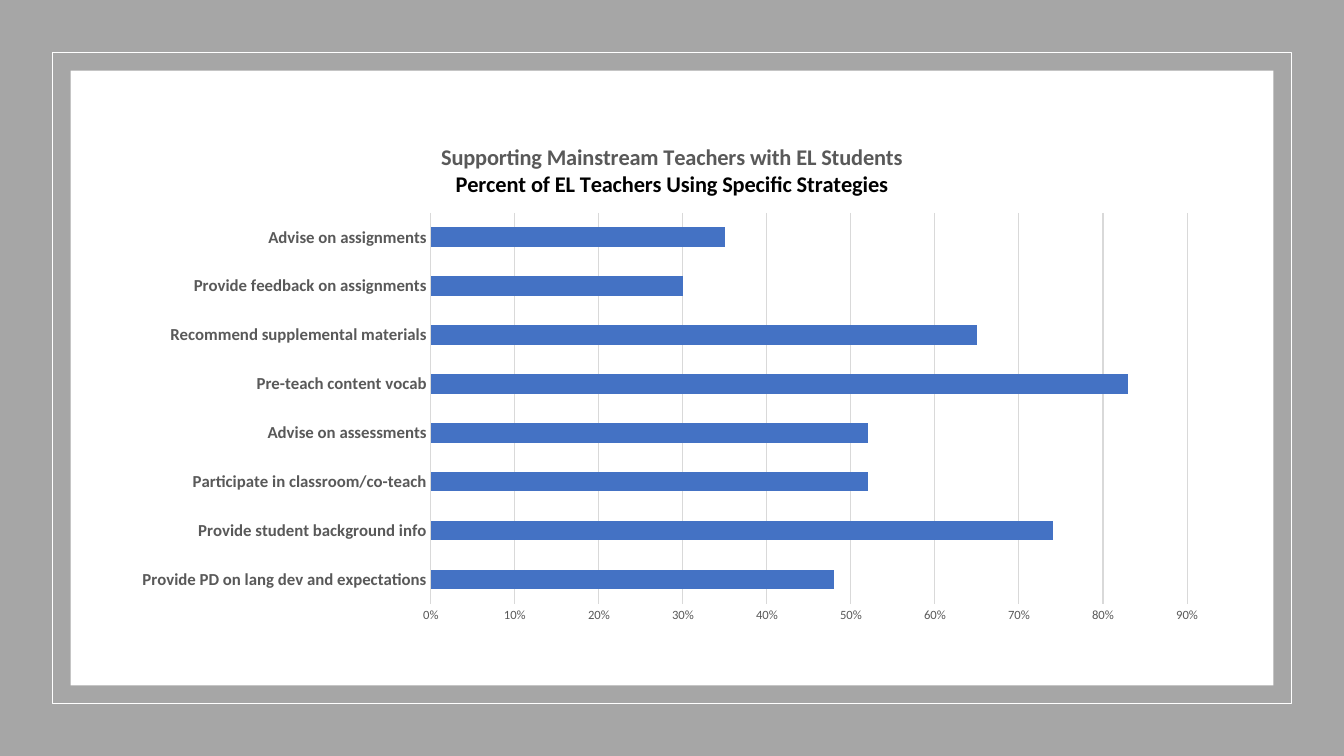
"""Builds a slide with a framed bar chart of strategies used by EL teachers."""
import pptx
import pptx.chart.data
import pptx.dml.color
import pptx.enum.chart
import pptx.enum.shapes
import pptx.oxml
import pptx.oxml.ns
import pptx.util

COLORS = {"backdrop": "A6A6A6", "white": "FFFFFF", "bar": "4472C4",
          "text": "595959", "black": "000000", "grid": "D9D9D9"}
WIDTH, HEIGHT = 13.33, 7.5
STRATEGIES = [
    ("Provide PD on lang dev and expectations", 0.48),
    ("Provide student background info", 0.74),
    ("Participate in classroom/co-teach", 0.52),
    ("Advise on assessments", 0.52),
    ("Pre-teach content vocab", 0.83),
    ("Recommend supplemental materials", 0.65),
    ("Provide feedback on assignments", 0.30),
    ("Advise on assignments", 0.35),
]
TITLE = [("Supporting Mainstream Teachers with EL Students", "text"),
         ("Percent of EL Teachers Using Specific Strategies", "black")]
PLOT_SHARES = {"x": 0.28, "y": 0.175, "w": 0.69, "h": 0.77}


def rgb(name):
    return pptx.dml.color.RGBColor.from_string(COLORS[name])


def inset(margin):
    return [pptx.util.Inches(v) for v in
            (margin, margin, WIDTH - 2 * margin, HEIGHT - 2 * margin)]


prs = pptx.Presentation()
prs.slide_width = pptx.util.Inches(WIDTH)
prs.slide_height = pptx.util.Inches(HEIGHT)
s = prs.slides.add_slide(prs.slide_layouts[6])

for margin, fill, line in [(0, "backdrop", None), (0.52, None, "white"),
                           (0.7, "white", None)]:
    sp = s.shapes.add_shape(pptx.enum.shapes.MSO_SHAPE.RECTANGLE, *inset(margin))
    sp.shadow.inherit = False
    if fill:
        sp.fill.solid()
        sp.fill.fore_color.rgb = rgb(fill)
    else:
        sp.fill.background()
    if line:
        sp.line.color.rgb = rgb(line)
        sp.line.width = pptx.util.Pt(1)
    else:
        sp.line.fill.background()

data = pptx.chart.data.CategoryChartData(number_format="0%")
data.categories = [name for name, share in STRATEGIES]
data.add_series("Series 1", [share for name, share in STRATEGIES])
chart = s.shapes.add_chart(pptx.enum.chart.XL_CHART_TYPE.BAR_STACKED,
                           *inset(1.23), data).chart
chart.has_legend = False
chart.font.name = "Calibri"
chart.font.size = pptx.util.Pt(10)

chart.has_title = True
chart.chart_title.include_in_layout = False
tf = chart.chart_title.text_frame
for i, (text, color) in enumerate(TITLE):
    p = tf.add_paragraph() if i else tf.paragraphs[0]
    r = p.add_run()
    r.text = text
    r.font.name = "Calibri"
    r.font.size = pptx.util.Pt(16)
    r.font.bold = True
    r.font.color.rgb = rgb(color)

plot = chart.plots[0]
plot.gap_width = 150
plot.overlap = 100
plot.vary_by_categories = False
bars = plot.series[0].format.fill
bars.solid()
bars.fore_color.rgb = rgb("bar")

for axis, size, bold in [(chart.category_axis, 12, True),
                         (chart.value_axis, 9, False)]:
    axis.major_tick_mark = pptx.enum.chart.XL_TICK_MARK.NONE
    axis.minor_tick_mark = pptx.enum.chart.XL_TICK_MARK.NONE
    font = axis.tick_labels.font
    font.name = "Calibri"
    font.size = pptx.util.Pt(size)
    font.bold = bold
    font.color.rgb = rgb("text")

chart.value_axis.minimum_scale = 0
chart.value_axis.maximum_scale = 0.9
chart.value_axis.major_unit = 0.1
chart.value_axis.tick_labels.number_format = "0%"
chart.value_axis.tick_labels.number_format_is_linked = False
chart.value_axis.format.line.fill.background()
chart.value_axis.has_major_gridlines = True
for line in (chart.category_axis.format.line,
             chart.value_axis.major_gridlines.format.line):
    line.color.rgb = rgb("grid")
    line.width = pptx.util.Pt(0.75)

area = chart.element.find(".//" + pptx.oxml.ns.qn("c:plotArea"))
for old in area.findall(pptx.oxml.ns.qn("c:layout")):
    area.remove(old)
modes = '<c:layoutTarget val="inner"/><c:xMode val="edge"/><c:yMode val="edge"/>'
shares = "".join(f'<c:{k} val="{v}"/>' for k, v in PLOT_SHARES.items())
area.insert(0, pptx.oxml.parse_xml(
    f'<c:layout {pptx.oxml.ns.nsdecls("c")}><c:manualLayout>'
    f'{modes}{shares}</c:manualLayout></c:layout>'))

prs.save("out.pptx")
